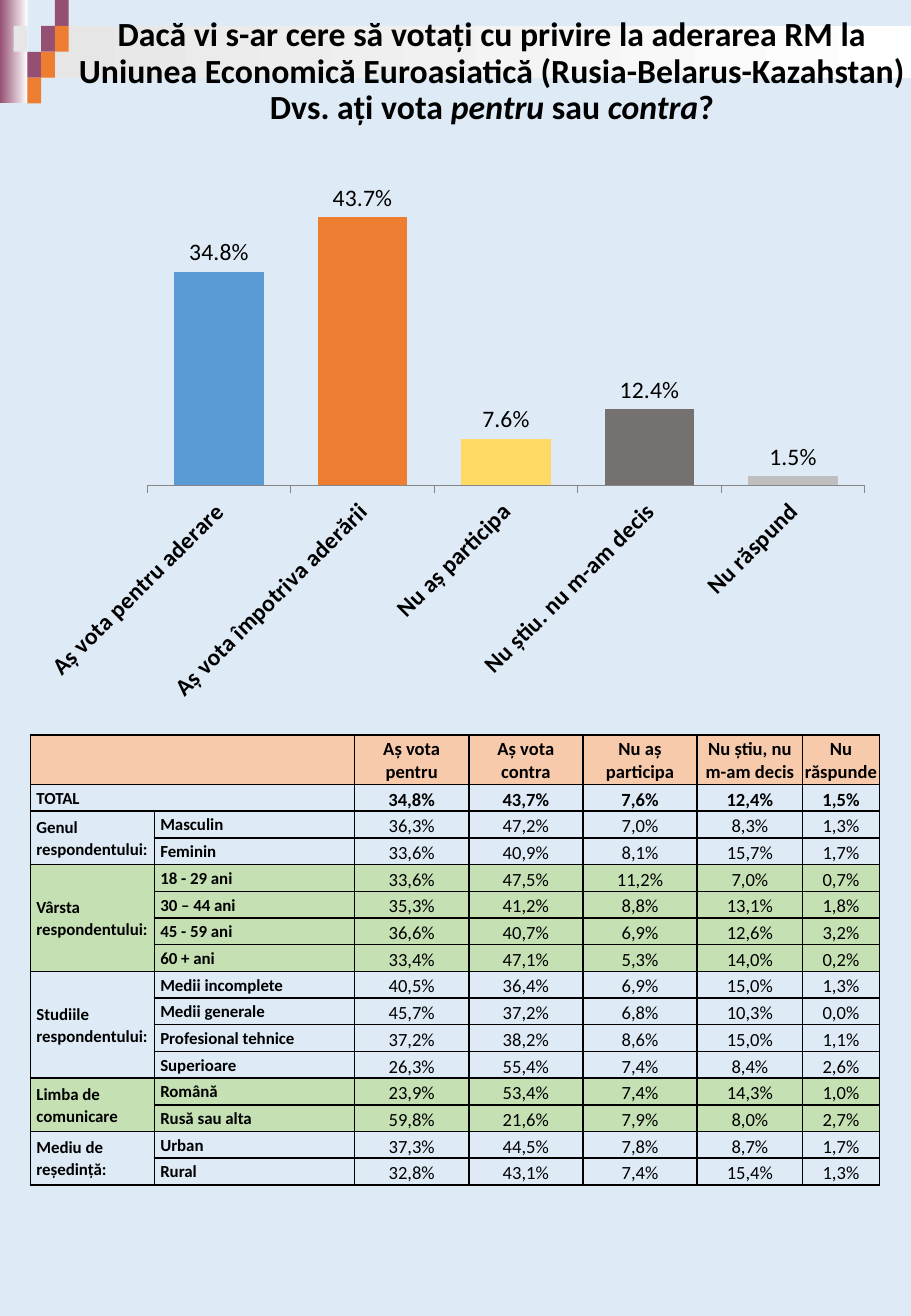
from dataclasses import dataclass

from pptx import Presentation
from pptx.chart.data import CategoryChartData
from pptx.dml.color import RGBColor
from pptx.enum.chart import XL_CHART_TYPE as ChartType, XL_LABEL_POSITION as LabelPosition
from pptx.enum.chart import XL_TICK_LABEL_POSITION as TickLabels, XL_TICK_MARK as TickMark
from pptx.enum.shapes import MSO_SHAPE as Preset
from pptx.enum.text import MSO_ANCHOR as Anchor, MSO_AUTO_SIZE as AutoSize, PP_ALIGN as Align
from pptx.oxml import parse_xml
from pptx.oxml.ns import nsdecls, qn
from pptx.util import Inches, Pt

FONT = "Calibri"
BLACK = RGBColor(0, 0, 0)
WHITE = RGBColor(0xFF, 0xFF, 0xFF)
PAGE_BLUE = RGBColor(0xDE, 0xEB, 0xF7)
TOTAL_BLUE = RGBColor(0xDE, 0xEA, 0xF6)
PLUM = RGBColor(0x95, 0x4F, 0x72)
ORANGE = RGBColor(0xED, 0x7D, 0x31)
PALE_GREY = RGBColor(0xE7, 0xE6, 0xE6)
AXIS_GREY = RGBColor(0x86, 0x86, 0x86)
PEACH = RGBColor(0xF7, 0xCA, 0xAC)
GREEN = RGBColor(0xC5, 0xE0, 0xB3)
BLUE = RGBColor(0x5B, 0x9B, 0xD5)
YELLOW = RGBColor(0xFF, 0xD9, 0x66)
DARK_GREY = RGBColor(0x76, 0x71, 0x71)
SILVER = RGBColor(0xBF, 0xBF, 0xBF)

PAGE_WIDTH, PAGE_HEIGHT = 7.5, 10.83
TILE_WIDTH, TILE_HEIGHT = 0.113, 0.213


@dataclass
class Tile:
    """A rectangle on the corner mosaic's grid; fades to white if asked."""
    column: float
    row: float
    color: RGBColor
    columns: float = 1
    rows: float = 1
    fades: bool = False


@dataclass
class Bar:
    answer: str
    share: float
    color: RGBColor


@dataclass
class Group:
    name: str
    fill: RGBColor | None
    rows: list[tuple[str, str]]


TILES = [
    Tile(0, 0, PLUM, columns=2, rows=4, fades=True),
    Tile(3, 1, PALE_GREY, columns=PAGE_WIDTH / TILE_WIDTH - 3, rows=2, fades=True),
    Tile(3, 1, PLUM), Tile(4, 0, PLUM), Tile(4, 1, ORANGE), Tile(2, 2, PLUM),
    Tile(1, 1, PALE_GREY), Tile(3, 2, ORANGE), Tile(2, 3, ORANGE),
]
TITLE_RUNS = [
    ("Dacă vi s-ar cere să votați cu privire la aderarea RM la Uniunea Economică "
     "Euroasiatică (Rusia-Belarus-Kazahstan) Dvs. ați vota ", False),
    ("pentru", True), (" sau ", False), ("contra", True), ("?", False),
]
BARS = [
    Bar("Aș vota pentru aderare", 0.348, BLUE),
    Bar("Aș vota împotriva aderării", 0.437, ORANGE),
    Bar("Nu aș participa", 0.076, YELLOW),
    Bar("Nu știu. nu m-am decis", 0.124, DARK_GREY),
    Bar("Nu răspund", 0.015, SILVER),
]
COLUMN_WIDTHS = [1.02, 1.65, 0.94, 0.94, 0.94, 0.87, 0.63]
HEADER_HEIGHT, ROW_HEIGHT = 0.39, 0.22
HEADINGS = ["Aș vota pentru", "Aș vota\ncontra", "Nu aș participa",
            "Nu știu, nu m-am decis", "Nu răspunde"]
TOTALS = "34,8% 43,7% 7,6% 12,4% 1,5%"
GROUPS = [
    Group("Genul respondentului:", None, [
        ("Masculin", "36,3% 47,2% 7,0% 8,3% 1,3%"),
        ("Feminin", "33,6% 40,9% 8,1% 15,7% 1,7%")]),
    Group("Vârsta respondentului:", GREEN, [
        ("18 - 29 ani", "33,6% 47,5% 11,2% 7,0% 0,7%"),
        ("30 – 44 ani", "35,3% 41,2% 8,8% 13,1% 1,8%"),
        ("45 - 59 ani", "36,6% 40,7% 6,9% 12,6% 3,2%"),
        ("60 + ani", "33,4% 47,1% 5,3% 14,0% 0,2%")]),
    Group("Studiile respondentului:", None, [
        ("Medii incomplete", "40,5% 36,4% 6,9% 15,0% 1,3%"),
        ("Medii generale", "45,7% 37,2% 6,8% 10,3% 0,0%"),
        ("Profesional tehnice", "37,2% 38,2% 8,6% 15,0% 1,1%"),
        ("Superioare", "26,3% 55,4% 7,4% 8,4% 2,6%")]),
    Group("Limba de comunicare", GREEN, [
        ("Română", "23,9% 53,4% 7,4% 14,3% 1,0%"),
        ("Rusă sau alta", "59,8% 21,6% 7,9% 8,0% 2,7%")]),
    Group("Mediu de reședință:", None, [
        ("Urban", "37,3% 44,5% 7,8% 8,7% 1,7%"),
        ("Rural", "32,8% 43,1% 7,4% 15,4% 1,3%")]),
]


def style_font(font, size: float, bold: bool = False) -> None:
    font.name, font.size, font.bold = FONT, Pt(size), bold
    font.color.rgb = BLACK


def draw_tile(page, tile: Tile) -> None:
    box = page.shapes.add_shape(
        Preset.RECTANGLE, Inches(tile.column * TILE_WIDTH), Inches(tile.row * TILE_HEIGHT),
        Inches(tile.columns * TILE_WIDTH), Inches(tile.rows * TILE_HEIGHT))
    box.shadow.inherit = False
    box.line.fill.background()
    if tile.fades:
        box.fill.gradient()
        box.fill.gradient_angle = 0
        for stop, color in zip(box.fill.gradient_stops, (tile.color, WHITE)):
            stop.color.rgb = color
    else:
        box.fill.solid()
        box.fill.fore_color.rgb = tile.color


def draw_title(page) -> None:
    title = page.shapes.title
    page.shapes.element.append(title.element)  # in front of the mosaic
    title.left, title.top = Inches(0.52), Inches(0.14)
    title.width, title.height = Inches(7.06), Inches(0.91)
    frame = title.text_frame
    frame.word_wrap, frame.auto_size = True, AutoSize.NONE
    frame.vertical_anchor = Anchor.MIDDLE
    para = frame.paragraphs[0]
    para.alignment, para.line_spacing = Align.CENTER, 0.9
    for text, italic in TITLE_RUNS:
        span = para.add_run()
        span.text = text
        style_font(span.font, 20, bold=True)
        span.font.italic = italic


def place_plot(chart, left: float, top: float, width: float, height: float) -> None:
    """Fix the inner plot area, in shares of the chart's size."""
    area = chart.element.find(".//" + qn("c:plotArea"))
    for layout in area.findall(qn("c:layout")):
        area.remove(layout)
    sizes = "".join(f'<c:{key} val="{share}"/>' for key, share in
                    zip("xywh", (left, top, width, height)))
    area.insert(0, parse_xml(
        f'<c:layout {nsdecls("c")}><c:manualLayout><c:layoutTarget val="inner"/>'
        f'<c:xMode val="edge"/><c:yMode val="edge"/>{sizes}</c:manualLayout></c:layout>'))


def draw_chart(page) -> None:
    data = CategoryChartData(number_format="0.0%")
    data.categories = [bar.answer for bar in BARS]
    data.add_series("Series 1", [bar.share for bar in BARS])
    chart = page.shapes.add_chart(ChartType.COLUMN_CLUSTERED, Inches(0.31), Inches(1.38),
                                  Inches(6.95), Inches(4.51), data).chart
    chart.has_legend = chart.has_title = False
    style_font(chart.font, 14)
    answers, shares = chart.category_axis, chart.value_axis
    answers.major_tick_mark, answers.tick_label_position = TickMark.OUTSIDE, TickLabels.LOW
    answers.format.line.color.rgb = AXIS_GREY
    style_font(answers.tick_labels.font, 14, bold=True)
    chart.element.xpath("//c:catAx/c:txPr/a:bodyPr")[0].set("rot", "-2700000")
    shares.visible = False
    shares.minimum_scale, shares.maximum_scale = 0, 0.5
    shares.major_gridlines.format.line.color.rgb = PAGE_BLUE
    shares.major_gridlines.format.line.width = Pt(0.75)
    plot = chart.plots[0]
    plot.gap_width, plot.vary_by_categories, plot.has_data_labels = 60, False, True
    labels = plot.data_labels
    labels.show_value, labels.position = True, LabelPosition.OUTSIDE_END
    labels.number_format, labels.number_format_is_linked = "0.0%", False
    style_font(labels.font, 14)
    for index, bar in enumerate(BARS):
        fill = plot.series[0].points[index].format.fill
        fill.solid()
        fill.fore_color.rgb = bar.color
    place_plot(chart, 0.13, 0.02, 0.85, 0.56)


def style_cell(cell, fill: RGBColor | None) -> None:
    for side in "LRTB":
        cell._tc.get_or_add_tcPr().append(parse_xml(
            f'<a:ln{side} {nsdecls("a")} w="12700"><a:solidFill>'
            f'<a:srgbClr val="{BLACK}"/></a:solidFill></a:ln{side}>'))
    if fill is None:
        cell.fill.background()
    else:
        cell.fill.solid()
        cell.fill.fore_color.rgb = fill


def write_cell(cell, text: str, size: float = 11, bold: bool = True,
               label: bool = False, anchor: Anchor = Anchor.MIDDLE) -> None:
    """Write a cell, one paragraph a line; labels stand left, the rest centred."""
    cell.vertical_anchor = anchor
    cell.margin_left = cell.margin_right = Inches(0.05 if label else 0.01)
    cell.margin_top, cell.margin_bottom = Inches(0 if label else 0.01), 0
    frame = cell.text_frame
    for index, line in enumerate(text.split("\n")):
        para = frame.add_paragraph() if index else frame.paragraphs[0]
        para.alignment = Align.LEFT if label else Align.CENTER
        para.line_spacing = 1.07 if label else 1.0
        span = para.add_run()
        span.text = line
        style_font(span.font, size, bold)


def draw_table(page) -> None:
    lines = [("TOTAL", TOTALS, TOTAL_BLUE)]
    lines += [(name, values, group.fill) for group in GROUPS for name, values in group.rows]
    table = page.shapes.add_table(
        len(lines) + 1, len(COLUMN_WIDTHS), Inches(0.25), Inches(6.05),
        Inches(sum(COLUMN_WIDTHS)), Inches(HEADER_HEIGHT + ROW_HEIGHT * len(lines))).table
    table.first_row = table.horz_banding = False
    for column, width in zip(table.columns, COLUMN_WIDTHS):
        column.width = Inches(width)
    fills = [PEACH] + [fill for _, _, fill in lines]
    for index, (row, fill) in enumerate(zip(table.rows, fills)):
        row.height = Inches(ROW_HEIGHT if index else HEADER_HEIGHT)
        for cell in row.cells:
            style_cell(cell, fill)
    for index in (0, 1):
        table.cell(index, 0).merge(table.cell(index, 1))
    for column, heading in enumerate(HEADINGS, start=2):
        write_cell(table.cell(0, column), heading)
    for index, (name, values, _) in enumerate(lines, start=1):
        total = index == 1
        write_cell(table.cell(index, 0 if total else 1), name, 10, label=True)
        for column, value in enumerate(values.split(), start=2):
            write_cell(table.cell(index, column), value, bold=total, anchor=Anchor.BOTTOM)
    top = 2
    for group in GROUPS:
        table.cell(top, 0).merge(table.cell(top + len(group.rows) - 1, 0))
        write_cell(table.cell(top, 0), group.name, 10, label=True)
        top += len(group.rows)


def main() -> None:
    deck = Presentation()
    deck.slide_width, deck.slide_height = Inches(PAGE_WIDTH), Inches(PAGE_HEIGHT)
    page = deck.slides.add_slide(deck.slide_layouts.get_by_name("Title Only"))
    page.background.fill.solid()
    page.background.fill.fore_color.rgb = PAGE_BLUE
    for tile in TILES:
        draw_tile(page, tile)
    draw_title(page)
    draw_table(page)
    draw_chart(page)
    deck.save("out.pptx")


if __name__ == "__main__":
    main()
